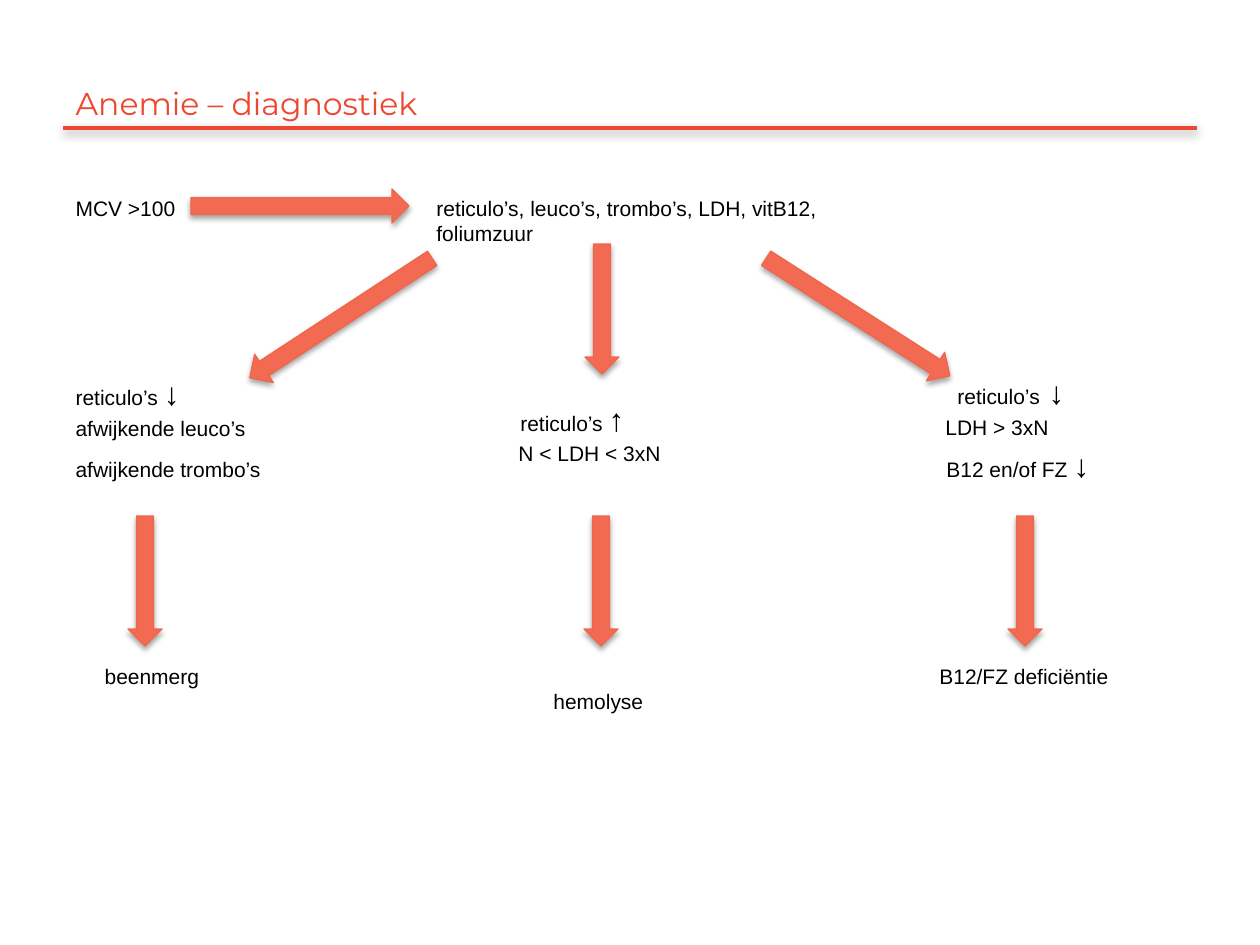
from lxml import etree
from pptx import Presentation
from pptx import util as u
from pptx.dml.color import RGBColor
from pptx.enum import shapes, text
from pptx.oxml import ns

RED = RGBColor(0xEF, 0x46, 0x30)
FILL = RGBColor(0xF2, 0x6A, 0x51)
EDGE = RGBColor(0xF1, 0x65, 0x4B)
BLACK = RGBColor(0, 0, 0)


def px(n):
    return u.Emu(round(n * 914400 / 126))


def shade(shape, blur, dist, alpha):
    """Give a shape a soft black shadow straight below it."""
    props = shape._element.spPr
    for old in props.findall(ns.qn("a:effectLst")):
        props.remove(old)
    effects = etree.SubElement(props, ns.qn("a:effectLst"))
    outer = etree.SubElement(
        effects, ns.qn("a:outerShdw"), blurRad=str(u.Pt(blur)),
        dist=str(u.Pt(dist)), dir="5400000", rotWithShape="0")
    color = etree.SubElement(outer, ns.qn("a:srgbClr"), val="000000")
    etree.SubElement(color, ns.qn("a:alpha"), val=str(alpha * 1000))


prs = Presentation()
prs.slide_width, prs.slide_height = px(1260), px(945)
slide = prs.slides.add_slide(prs.slide_layouts[1])

# Rule under the title
rule = slide.shapes.add_connector(
    shapes.MSO_CONNECTOR.STRAIGHT, px(63), px(128), px(1197), px(128))
rule.line.color.rgb = RED
rule.line.width = u.Pt(2)
shade(rule, 5, 1.6, 38)

# Title
title = slide.shapes.title
title.left, title.top, title.width, title.height = px(63), px(39), px(1134), px(89)
frame = title.text_frame
frame.auto_size = text.MSO_AUTO_SIZE.NONE
frame.vertical_anchor = text.MSO_ANCHOR.BOTTOM
para = frame.paragraphs[0]
para.alignment = text.PP_ALIGN.LEFT
run = para.add_run()
run.text = "Anemie – diagnostiek"
run.font.name, run.font.size, run.font.color.rgb = "Montserrat", u.Pt(18), RED

# Columns: box in px, then rows of space before (pt), indent (px), runs with size
LEFT = [
    (0, 0, [("MCV >100", 12)]),
    (88, 0, [("reticulo’s ", 12), ("↓", 18)]),
    (2, 0, [("afwijkende leuco’s", 12)]),
    (3.5, 0, [("afwijkende trombo’s", 12)]),
    (107, 29, [("beenmerg", 12)]),
]
MID = [
    (0, 0, [("reticulo’s, leuco’s, trombo’s, LDH, vitB12, foliumzuur", 12)]),
    (88, 84, [("reticulo’s ", 12), ("↑", 18)]),
    (2, 82, [("N < LDH < 3xN", 12)]),
    (127, 117, [("hemolyse", 12)]),
]
RIGHT = [
    (0, 18, [("reticulo’s", 12), (" ↓", 18)]),
    (2, 6, [("LDH > 3xN", 12)]),
    (3.5, 7, [("B12 en/of FZ ", 12), ("↓", 18)]),
    (103, 0, [("B12/FZ deficiëntie", 12)]),
]
# The left trombo’s row has no arrow, so it sits lower by the line difference
LEFT[3] = (9, 0, LEFT[3][2])
LEFT[4] = (104, 29, LEFT[4][2])

body = slide.placeholders[1]
body.left, body.top, body.width, body.height = px(63), px(189), px(350), px(653)
mid = slide.shapes.add_textbox(px(424), px(189), px(500), px(520))
right = slide.shapes.add_textbox(px(927), px(367), px(270), px(342))
for box, rows in ((body, LEFT), (mid, MID), (right, RIGHT)):
    frame = box.text_frame
    frame.word_wrap = True
    frame.auto_size = text.MSO_AUTO_SIZE.NONE
    for i, (gap, inset, runs) in enumerate(rows):
        para = frame.add_paragraph() if i else frame.paragraphs[0]
        props = para._p.get_or_add_pPr()
        props.set("marL", str(px(inset)))
        props.set("indent", "0")
        etree.SubElement(props, ns.qn("a:buNone"))
        para.space_before = u.Pt(gap)
        for words, size in runs:
            run = para.add_run()
            run.text = words
            run.font.name, run.font.size, run.font.color.rgb = "Arial", u.Pt(size), BLACK

# Block arrows: left, top, length (px), turn (degrees)
ARROWS = [
    (191, 189, 218, 0), (232, 301, 218, 146.8), (749, 300, 218, 32.6),
    (537, 292, 130, 90), (960, 564, 130, 90), (536, 564, 130, 90), (80, 564, 130, 90),
]
for left, top, size, turn in ARROWS:
    arrow = slide.shapes.add_shape(
        shapes.MSO_SHAPE.RIGHT_ARROW, px(left), px(top), px(size), px(34))
    arrow.rotation = turn
    arrow.fill.solid()
    arrow.fill.fore_color.rgb = FILL
    arrow.line.color.rgb = EDGE
    arrow.line.width = u.Pt(0.75)
    shade(arrow, 3.1, 1.8, 35)

prs.save("out.pptx")
